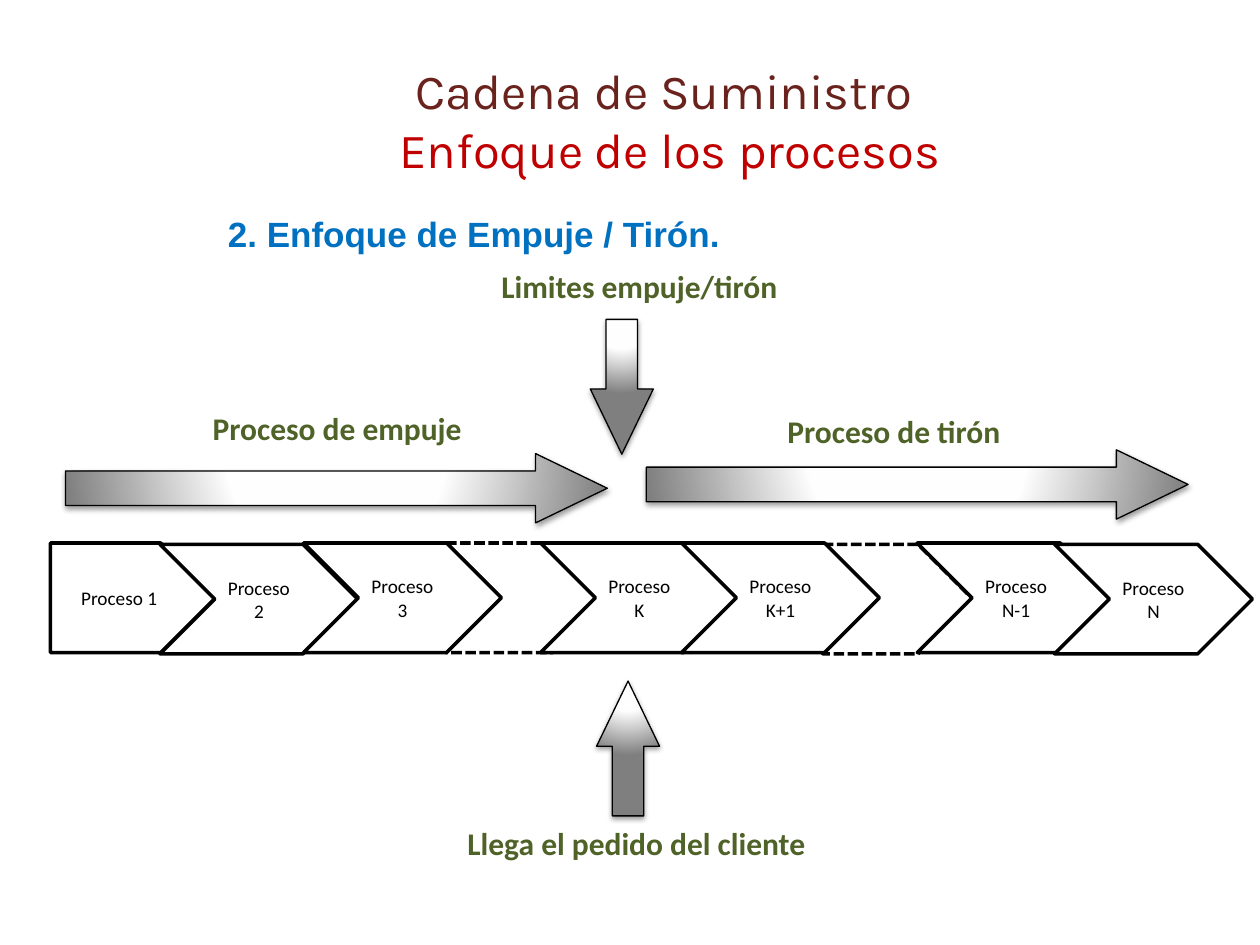
from dataclasses import dataclass

from lxml import etree
from pptx import Presentation
from pptx.dml.color import RGBColor
from pptx.enum.dml import MSO_LINE
from pptx.enum.shapes import MSO_SHAPE
from pptx.enum.text import MSO_ANCHOR, MSO_AUTO_SIZE, PP_ALIGN
from pptx.oxml.ns import qn
from pptx.util import Inches, Pt

CHEVRON = MSO_SHAPE.CHEVRON
PENTAGON = MSO_SHAPE.PENTAGON
RIGHT_ARROW = MSO_SHAPE.RIGHT_ARROW
DASH = MSO_LINE.SQUARE_DOT
CENTER = PP_ALIGN.CENTER
LEFT = PP_ALIGN.LEFT
MIDDLE = MSO_ANCHOR.MIDDLE
FIT_SHAPE = MSO_AUTO_SIZE.SHAPE_TO_FIT_TEXT
NS = "http://schemas.openxmlformats.org/drawingml/2006/main"


@dataclass(frozen=True)
class Theme:
    title_font: str = "Karla"
    heading_font: str = "Arial"
    body_font: str = "Calibri"
    brown: str = "6A221D"
    red: str = "C00000"
    blue: str = "0070C0"
    green: str = "4F6228"
    black: str = "000000"
    white: str = "FFFFFF"
    gradient: tuple = ((0, "FFFFFF"), (40, "FEFEFE"), (100, "7F7F7F"))
    title_size: int = 28
    heading_size: int = 20
    label_size: int = 18
    process_size: int = 11


THEME = Theme()


def rgb(color):
    return RGBColor.from_string(color)


def child(parent, tag, **attrs):
    el = etree.SubElement(parent, f"{{{NS}}}{tag}")
    for name, value in attrs.items():
        el.set(name, str(value))
    return el


def add_run(p, text, font, size, color, bold=False):
    r = p.add_run()
    r.text = text
    r.font.name = font
    r.font.size = Pt(size)
    r.font.bold = bold
    r.font.color.rgb = rgb(color)


def add_text_box(s, left, top, width, height, align, wrap=True):
    sp = s.shapes.add_textbox(Inches(left), Inches(top), Inches(width), Inches(height))
    tf = sp.text_frame
    tf.word_wrap = wrap
    tf.paragraphs[0].alignment = align
    return tf


def add_title(s):
    tf = add_text_box(s, 1.49, 0.32, 7.65, 1.25, CENTER)
    tf.vertical_anchor = MIDDLE
    p = tf.paragraphs[0]
    add_run(p, "Cadena de Suministro ", THEME.title_font, THEME.title_size, THEME.brown)
    p.add_line_break()
    add_run(p, "Enfoque de los procesos", THEME.title_font, THEME.title_size, THEME.red)


def add_heading(s):
    tf = add_text_box(s, 1.71, 1.47, 4.65, 0.61, LEFT)
    tf.auto_size = FIT_SHAPE
    p = tf.paragraphs[0]
    p.line_spacing = 1.5
    add_run(p, "2. Enfoque de Empuje / Tirón.", THEME.heading_font,
            THEME.heading_size, THEME.blue, bold=True)


def add_label(s, text, left, top, width):
    tf = add_text_box(s, left, top, width, 0.4, CENTER, wrap=False)
    tf.auto_size = FIT_SHAPE
    add_run(tf.paragraphs[0], text, THEME.body_font, THEME.label_size, THEME.green, bold=True)


def add_outlined(s, kind, left, top, width, height, line_width):
    sp = s.shapes.add_shape(kind, Inches(left), Inches(top), Inches(width), Inches(height))
    sp.shadow.inherit = False
    sp.line.color.rgb = rgb(THEME.black)
    sp.line.width = Pt(line_width)
    return sp


def add_process(s, left, top, width, text="", kind=CHEVRON):
    sp = add_outlined(s, kind, left, top, width, 0.87, 2)
    sp.fill.solid()
    sp.fill.fore_color.rgb = rgb(THEME.white)
    if text:
        tf = sp.text_frame
        tf.word_wrap = True
        tf.vertical_anchor = MIDDLE
        p = tf.paragraphs[0]
        p.alignment = CENTER
        add_run(p, text, THEME.body_font, THEME.process_size, THEME.black)
    else:
        sp.line.dash_style = DASH


def set_radial_fill(sp):
    grad = etree.Element(f"{{{NS}}}gradFill", rotWithShape="0")
    stops = child(grad, "gsLst")
    for pos, color in THEME.gradient:
        child(child(stops, "gs", pos=pos * 1000), "srgbClr", val=color)
    radial = child(grad, "path", path="circle")
    child(radial, "fillToRect", l=50000, t=-80000, r=50000, b=180000)
    sp.fill.background()
    sp_pr = sp.element.spPr
    sp_pr.replace(sp_pr.find(qn("a:noFill")), grad)


def set_shadow(sp):
    effects = sp.element.spPr.find(qn("a:effectLst"))
    shadow = child(effects, "outerShdw", blurRad=Pt(3.1), dist=Pt(1.6),
                   dir=90 * 60000, rotWithShape=0)
    child(child(shadow, "srgbClr", val=THEME.black), "alpha", val=38000)


def add_arrow(s, left, top, width, height, rotation=0):
    sp = add_outlined(s, RIGHT_ARROW, left, top, width, height, 0.75)
    sp.adjustments[0] = 0.5
    sp.adjustments[1] = 1.035
    sp.rotation = rotation
    set_radial_fill(sp)
    set_shadow(sp)


def main():
    prs = Presentation()
    prs.slide_width = Inches(10)
    prs.slide_height = Inches(7.5)
    s = prs.slides.add_slide(prs.slide_layouts[6])

    add_process(s, 6.53, 4.32, 1.19)
    add_process(s, 3.54, 4.31, 1.28)
    add_title(s)
    add_heading(s)

    add_process(s, 0.4, 4.31, 1.31, "Proceso 1", PENTAGON)
    for name, left, top in (
        ("2", 1.27, 4.32),
        ("3", 2.41, 4.31),
        ("K", 4.29, 4.31),
        ("K+1", 5.41, 4.31),
        ("N-1", 7.28, 4.31),
        ("N", 8.37, 4.32),
    ):
        add_process(s, left, top, 1.57, f"Proceso {name}")

    add_arrow(s, 0.52, 3.6, 4.3, 0.55)
    add_arrow(s, 5.13, 3.57, 4.3, 0.55)
    add_arrow(s, 4.45, 5.69, 1.07, 0.5, 270)
    add_arrow(s, 4.4, 2.82, 1.07, 0.5, 90)

    for text, left, top, width in (
        ("Llega el pedido del cliente ", 3.6, 6.49, 2.96),
        ("Proceso de empuje ", 1.58, 3.2, 2.25),
        ("Proceso de tirón", 6.14, 3.22, 1.91),
        ("Limites empuje/tirón", 3.87, 2.07, 2.41),
    ):
        add_label(s, text, left, top, width)

    prs.save("out.pptx")


if __name__ == "__main__":
    main()
